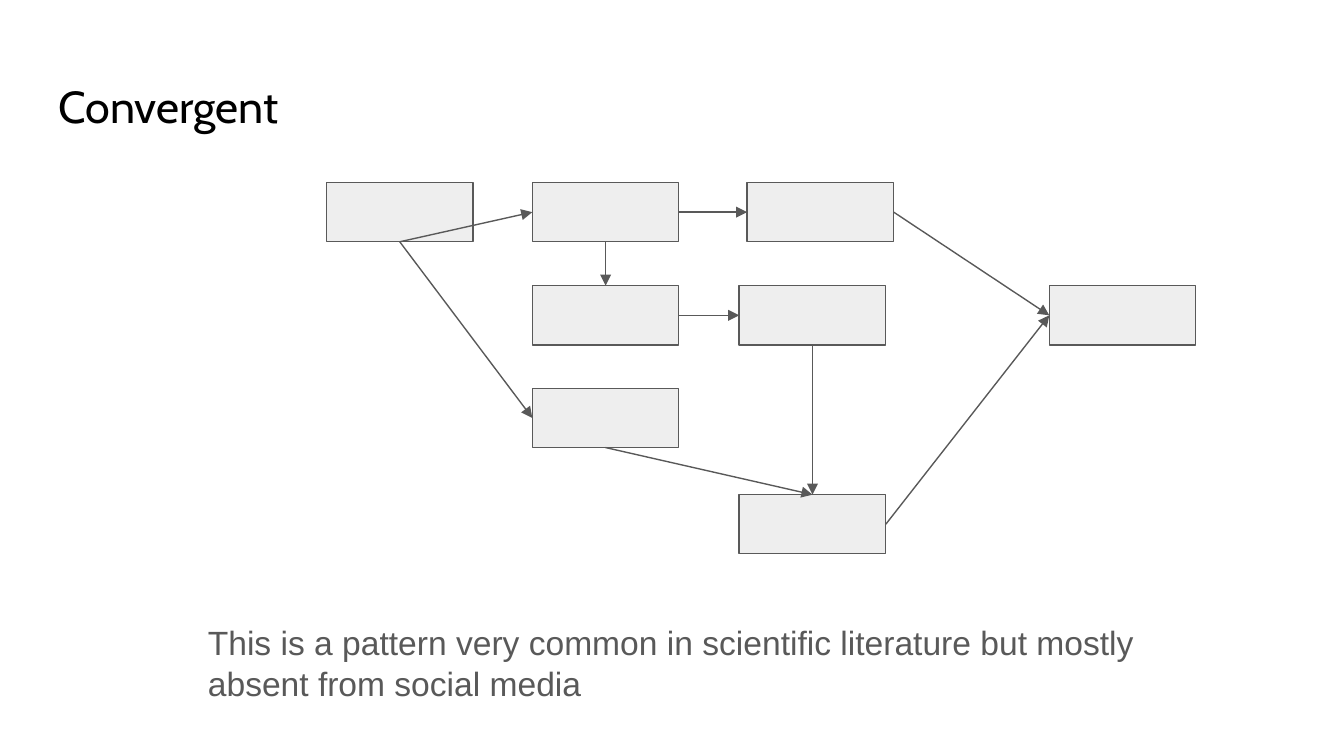
import pptx
import pptx.dml.color
import pptx.enum.shapes
import pptx.enum.text
import pptx.oxml
import pptx.oxml.ns
import pptx.util
from pptx.util import Cm

GREY = "595959"
NODE_FILL = "EEEEEE"
NODE_WIDTH, NODE_HEIGHT = Cm(2.77), Cm(1.12)

# Connection sites of a rectangle
TOP, LEFT, BOTTOM, RIGHT = range(4)

# Node offsets within the diagram, in cm
NODES = {
    "source": (0, 0),
    "upper": (3.89, 0),
    "upper_next": (7.95, 0),
    "middle": (3.89, 1.95),
    "middle_next": (7.8, 1.95),
    "lower": (3.89, 3.89),
    "merge": (7.8, 5.9),
    "target": (13.66, 1.95),
}

ARROWS = [
    ("source", BOTTOM, "upper", LEFT),
    ("upper", RIGHT, "upper_next", LEFT),
    ("upper", BOTTOM, "middle", TOP),
    ("middle", RIGHT, "middle_next", LEFT),
    ("source", BOTTOM, "lower", LEFT),
    ("lower", BOTTOM, "merge", TOP),
    ("middle_next", BOTTOM, "merge", TOP),
    ("upper_next", RIGHT, "target", LEFT),
    ("merge", RIGHT, "target", LEFT),
]


def color(hex_value):
    return pptx.dml.color.RGBColor.from_string(hex_value)


def style_line(line):
    line.color.rgb = color(GREY)
    line.width = pptx.util.Pt(0.75)


def add_text(slide, box, wording, font_format, hex_value):
    frame = slide.shapes.add_textbox(*box).text_frame
    frame_format = {
        "word_wrap": True,
        "vertical_anchor": pptx.enum.text.MSO_ANCHOR.TOP,
        **{f"margin_{side}": Cm(0.25) for side in ("left", "top", "right", "bottom")},
    }
    for name, value in frame_format.items():
        setattr(frame, name, value)
    run = frame.paragraphs[0].add_run()
    run.text = wording
    for name, value in font_format.items():
        setattr(run.font, name, value)
    run.font.color.rgb = color(hex_value)


def add_node(slide, left, top):
    node = slide.shapes.add_shape(
        pptx.enum.shapes.MSO_SHAPE.RECTANGLE, left, top, NODE_WIDTH, NODE_HEIGHT)
    node.shadow.inherit = False
    node.fill.solid()
    node.fill.fore_color.rgb = color(NODE_FILL)
    style_line(node.line)
    return node


def add_arrow(slide, start, start_site, end, end_site):
    arrow = slide.shapes.add_connector(
        pptx.enum.shapes.MSO_CONNECTOR.STRAIGHT, 0, 0, 0, 0)
    arrow.begin_connect(start, start_site)
    arrow.end_connect(end, end_site)
    style_line(arrow.line)
    # Arrowhead at the end, no shadow
    head = pptx.oxml.parse_xml(
        f'<a:tailEnd {pptx.oxml.ns.nsdecls("a")} type="triangle"/>')
    no_shadow = pptx.oxml.parse_xml(
        f'<a:effectLst {pptx.oxml.ns.nsdecls("a")}/>')
    arrow.line._get_or_add_ln().append(head)
    arrow._element.spPr.append(no_shadow)


def add_diagram(slide, box):
    left, top = box[:2]
    nodes = {name: add_node(slide, left + Cm(x), top + Cm(y))
             for name, (x, y) in NODES.items()}
    for start, start_site, end, end_site in ARROWS:
        add_arrow(slide, nodes[start], start_site, nodes[end], end_site)


def add_title(slide, box):
    add_text(slide, box, "Convergent",
             {"name": "Cabin", "size": pptx.util.Pt(24)}, "000000")


def add_caption(slide, box):
    add_text(slide, box,
             "This is a pattern very common in scientific literature "
             "but mostly absent from social media",
             {"name": "Arial", "size": pptx.util.Pt(18)}, GREY)


def main():
    deck = pptx.Presentation()
    deck.slide_width, deck.slide_height = Cm(25.4), Cm(14.29)
    slide = deck.slides.add_slide(deck.slide_layouts[6])
    add_title(slide, (Cm(0.86), Cm(1.24), Cm(23.67), Cm(1.6)))
    add_diagram(slide, (Cm(6.17), Cm(3.45)))
    add_caption(slide, (Cm(3.68), Cm(11.51), Cm(19.58), Cm(1.7)))
    deck.save("out.pptx")


if __name__ == "__main__":
    main()
